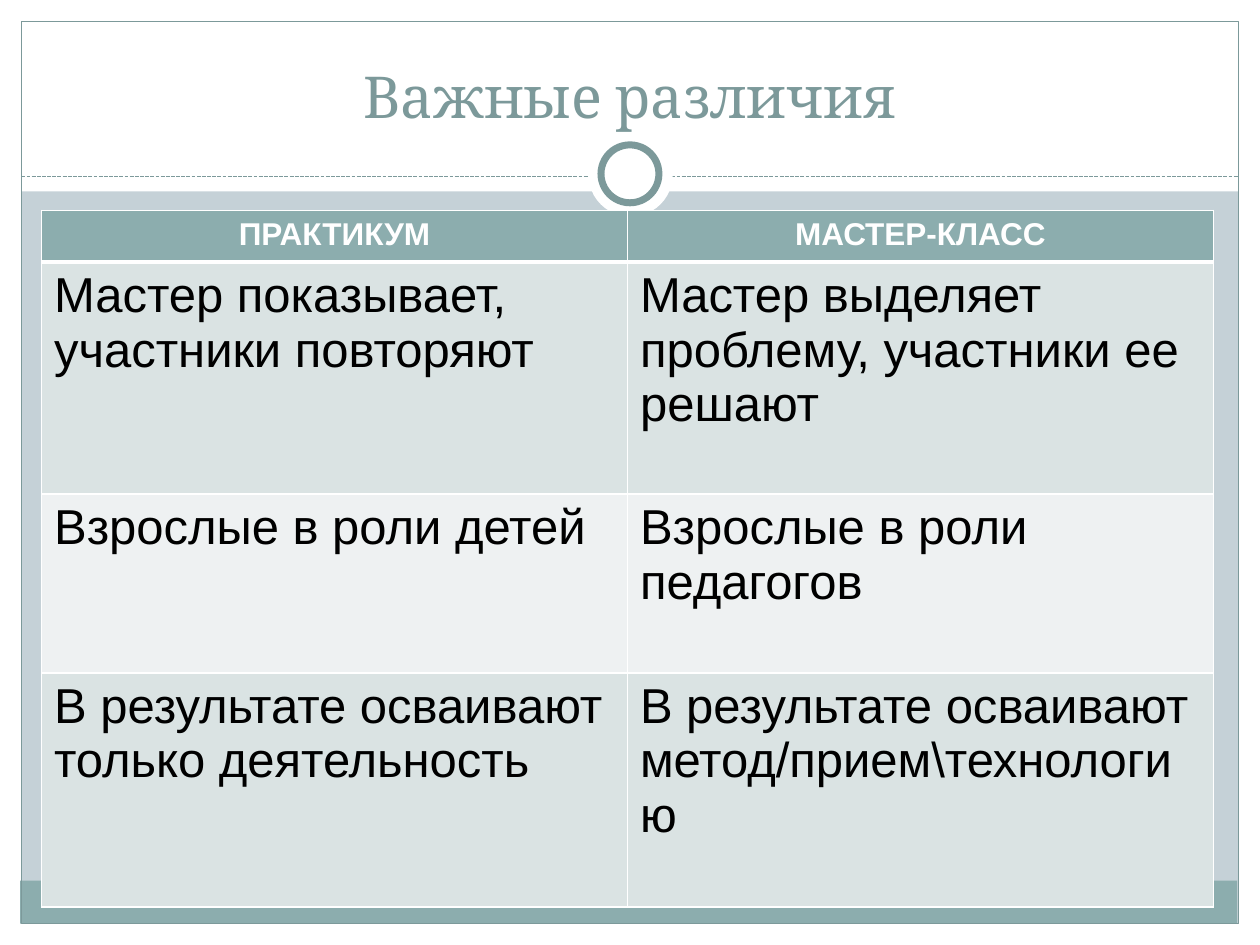
import lxml.etree
import pptx
import pptx.dml.color
import pptx.enum.dml
import pptx.enum.shapes
import pptx.enum.text
import pptx.oxml
import pptx.oxml.ns
import pptx.util
from pptx.util import Inches

COLORS = {
    "backdrop": "C5D1D7",
    "paper": "FFFFFF",
    "accent": "8CADAE",
    "outline": "7C999A",
    "odd_row": "DAE3E3",
    "even_row": "EEF1F2",
    "ink": "000000",
}
SHAPE = pptx.enum.shapes.MSO_SHAPE
ALIGN = pptx.enum.text.PP_ALIGN
ANCHOR = pptx.enum.text.MSO_ANCHOR
ROWS = [
    ("ПРАКТИКУМ", "МАСТЕР-КЛАСС"),
    ("Мастер показывает, участники повторяют",
     "Мастер выделяет проблему, участники ее решают"),
    ("Взрослые в роли детей", "Взрослые в роли педагогов"),
    ("В результате осваивают только деятельность",
     "В результате осваивают метод/прием\\технологию"),
]
ROW_HEIGHTS = (0.41, 1.84, 1.42, 1.86)


def rgb(name):
    """Return the named colour."""
    return pptx.dml.color.RGBColor.from_string(COLORS[name])


def apply_format(target, values):
    """Set each attribute of target from a dict."""
    for attribute, value in values.items():
        setattr(target, attribute, value)


def paint(part, color):
    """Give a shape, line, cell or background a solid fill."""
    part.fill.solid()
    part.fill.fore_color.rgb = rgb(color)


def write(frame, text, color, align, font):
    """Write one formatted paragraph into a text frame."""
    paragraph = frame.paragraphs[0]
    paragraph.alignment = align
    run = paragraph.add_run()
    run.text = text
    run.font.color.rgb = rgb(color)
    apply_format(run.font, font)


def add_figure(slide, kind, box, fill=None, line_width=None):
    """Add a plain shape with an optional fill and outline."""
    figure = slide.shapes.add_shape(kind, *map(Inches, box))
    figure.shadow.inherit = False
    if fill:
        paint(figure, fill)
    else:
        figure.fill.background()
    if line_width:
        paint(figure.line, "outline")
        figure.line.width = pptx.util.Pt(line_width)
    else:
        figure.line.fill.background()


def add_divider(slide, left, right, y):
    """Add the dashed line under the title."""
    divider = slide.shapes.add_connector(
        pptx.enum.shapes.MSO_CONNECTOR.STRAIGHT,
        Inches(left), Inches(y), Inches(right), Inches(y))
    paint(divider.line, "outline")
    apply_format(divider.line, {
        "width": pptx.util.Pt(0.75),
        "dash_style": pptx.enum.dml.MSO_LINE.SQUARE_DOT,
    })
    lxml.etree.SubElement(divider.element.spPr, pptx.oxml.ns.qn("a:effectLst"))


def add_frame(slide):
    """Draw the margins, bottom band, outline, divider and ring."""
    for margin in ((0, 7.33, 10, 0.17), (0, 0, 10, 1.52),
                   (0, 0, 0.17, 7.5), (9.83, 0, 0.17, 7.5)):
        add_figure(slide, SHAPE.RECTANGLE, margin, "paper")
    add_figure(slide, SHAPE.RECTANGLE, (0.16, 6.99, 9.66, 0.34), "accent")
    add_figure(slide, SHAPE.RECTANGLE, (0.17, 0.17, 9.66, 7.16), line_width=0.75)
    add_divider(slide, 0.17, 9.83, 1.4)
    add_figure(slide, SHAPE.OVAL, (4.67, 1.05, 0.67, 0.67), "paper")
    add_figure(slide, SHAPE.OVAL, (4.77, 1.15, 0.46, 0.46), "paper", 4)


def set_title(slide, text):
    """Place and format the title above the frame."""
    title = slide.shapes.title
    apply_format(title, {
        "left": Inches(0.33), "top": Inches(0.25),
        "width": Inches(9.33), "height": Inches(0.83),
    })
    apply_format(title.text_frame, {
        "word_wrap": True,
        "auto_size": pptx.enum.text.MSO_AUTO_SIZE.NONE,
        "vertical_anchor": ANCHOR.BOTTOM,
    })
    write(title.text_frame, text, "outline", ALIGN.CENTER,
          {"name": "Cambria", "size": pptx.util.Pt(33)})
    title.element.getparent().append(title.element)


def set_borders(cell, widths):
    """Draw white cell borders with widths in points by side."""
    properties = cell._tc.get_or_add_tcPr()
    for index, (side, width) in enumerate(widths.items()):
        border = pptx.oxml.parse_xml(
            f'<a:ln{side} {pptx.oxml.ns.nsdecls("a")} w="{pptx.util.Pt(width)}">'
            f'<a:solidFill><a:srgbClr val="{COLORS["paper"]}"/></a:solidFill>'
            f'</a:ln{side}>')
        properties.insert(index, border)


def add_comparison(slide):
    """Add the two-column comparison table."""
    table = slide.shapes.add_table(
        len(ROWS), 2, Inches(0.33), Inches(1.67),
        Inches(9.3), Inches(sum(ROW_HEIGHTS))).table
    header_font = {"name": "Arial", "size": pptx.util.Pt(18), "bold": True}
    body_font = {"name": "Arial", "size": pptx.util.Pt(28), "bold": False}
    for number, (texts, height) in enumerate(zip(ROWS, ROW_HEIGHTS)):
        table.rows[number].height = Inches(height)
        for column, text in enumerate(texts):
            cell = table.cell(number, column)
            if number == 0:
                paint(cell, "accent")
                write(cell.text_frame, text, "paper", ALIGN.CENTER, header_font)
            else:
                paint(cell, "odd_row" if number % 2 else "even_row")
                write(cell.text_frame, text, "ink", ALIGN.LEFT, body_font)
            set_borders(cell, {"L": 1, "R": 1, "T": 3 if number == 1 else 1,
                               "B": 3 if number == 0 else 1})


def main():
    """Build and save the slide."""
    deck = pptx.Presentation()
    apply_format(deck, {"slide_width": Inches(10), "slide_height": Inches(7.5)})
    slide = deck.slides.add_slide(deck.slide_layouts[5])
    paint(slide.background, "backdrop")
    add_frame(slide)
    set_title(slide, "Важные различия")
    add_comparison(slide)
    deck.save("out.pptx")


if __name__ == "__main__":
    main()
